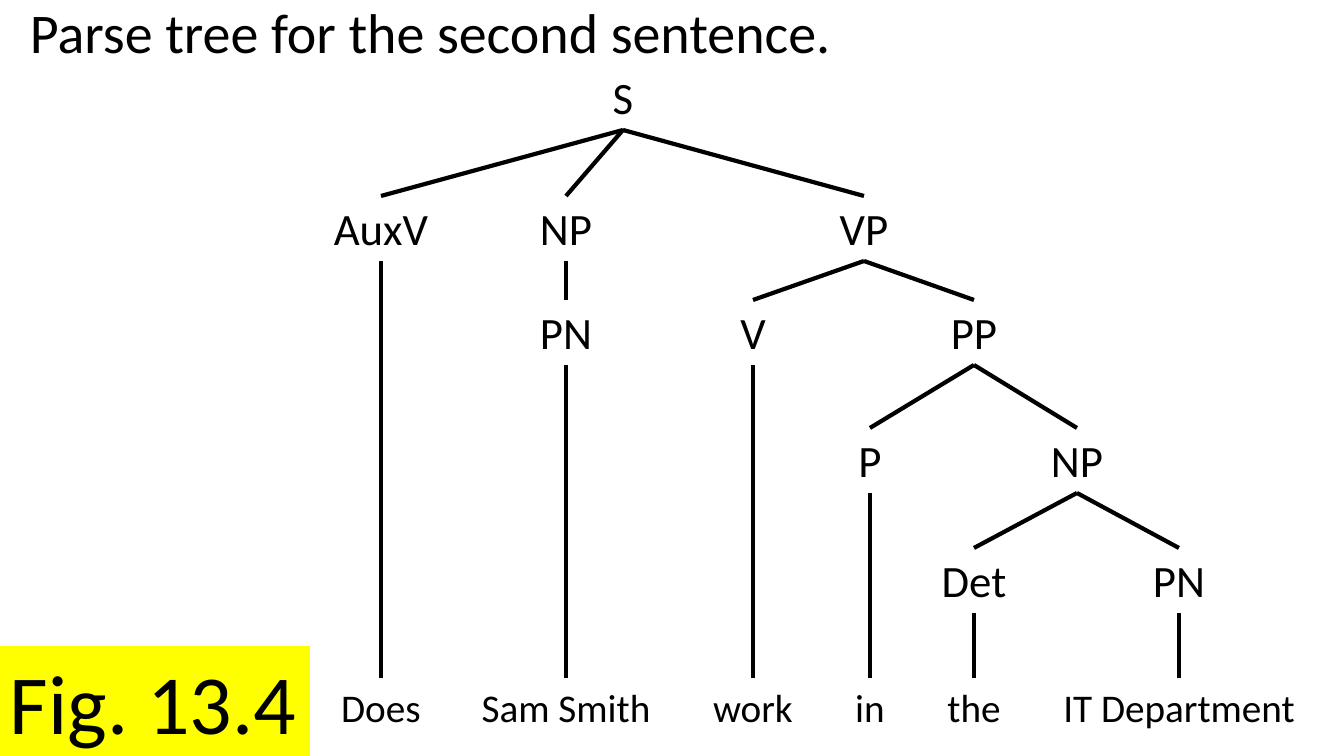
from pptx import Presentation
from pptx.dml.color import RGBColor
from pptx.enum.shapes import MSO_CONNECTOR, MSO_SHAPE
from pptx.enum.text import MSO_ANCHOR, MSO_AUTO_SIZE, PP_ALIGN
from pptx.oxml.ns import qn
from pptx.util import Pt
from lxml.etree import SubElement

BLACK = RGBColor(0, 0, 0)
YELLOW = RGBColor(255, 255, 0)
FONT = "Calibri"
NODE_H, WORD_H = 65, 57
LEVEL_TOPS = [0, 131, 235, 363, 483]
LABEL_WIDTHS = {"S": 42, "AuxV": 118, "NP": 74, "VP": 72, "PN": 74,
                "V": 48, "PP": 70, "P": 46, "Det": 88}
WORD_WIDTHS = {"Does": 102, "Sam Smith": 194, "work": 102, "in": 52,
               "the": 76, "IT Department": 256}

SENTENCE = ("S", 299, [
    ("AuxV", 57, "Does"),
    ("NP", 242, [("PN", 242, "Sam Smith")]),
    ("VP", 540, [
        ("V", 429, "work"),
        ("PP", 650, [
            ("P", 546, "in"),
            ("NP", 753, [
                ("Det", 650, "the"),
                ("PN", 855, "IT Department"),
            ]),
        ]),
    ]),
])


def px(n):
    return round(n * 914400 / 100.8)


def write(s, text, size, align, wrap=False):
    tf = s.text_frame
    tf.word_wrap = wrap
    if not wrap:
        tf.auto_size = MSO_AUTO_SIZE.SHAPE_TO_FIT_TEXT
    tf.vertical_anchor = MSO_ANCHOR.TOP
    p = tf.paragraphs[0]
    p.text = text
    p.alignment = align
    p.font.name = FONT
    p.font.size = Pt(size)
    p.font.color.rgb = BLACK
    return p


def add_title(slide, x, y, w, h):
    s = slide.shapes.add_textbox(px(x), px(y), px(w), px(h))
    p = write(s, "Parse tree for the second sentence.", 40, PP_ALIGN.LEFT, wrap=True)
    p.line_spacing = 0.9


def add_figure_label(slide, x, y, w, h):
    s = slide.shapes.add_shape(MSO_SHAPE.RECTANGLE, px(x), px(y), px(w), px(h))
    s.shadow.inherit = False
    s.fill.solid()
    s.fill.fore_color.rgb = YELLOW
    s.line.fill.background()
    write(s, "Fig. 13.4", 60, PP_ALIGN.LEFT)


def add_label(slide, text, size, center, top, w, h):
    s = slide.shapes.add_textbox(px(center - w // 2), px(top), px(w), px(h))
    write(s, text, size, PP_ALIGN.CENTER)
    return s


def add_branch(slide, parent, child):
    c = slide.shapes.add_connector(MSO_CONNECTOR.STRAIGHT, 0, 0, 0, 0)
    c.begin_connect(parent, 2)
    c.end_connect(child, 0)
    c.line.color.rgb = BLACK
    c.line.width = Pt(3)
    SubElement(c._element.spPr, qn("a:effectLst"))


def add_tree(slide, node, x, y, h, depth=0):
    label, center, below = node
    parent = add_label(slide, label, 32, x + center, y + LEVEL_TOPS[depth],
                       LABEL_WIDTHS[label], NODE_H)
    if isinstance(below, str):
        children = [add_label(slide, below, 28, x + center, y + h - WORD_H,
                              WORD_WIDTHS[below], WORD_H)]
    else:
        children = [add_tree(slide, child, x, y, h, depth + 1) for child in below]
    for child in children:
        add_branch(slide, parent, child)
    return parent


def main():
    prs = Presentation()
    prs.slide_width, prs.slide_height = px(1344), px(756)
    slide = prs.slides.add_slide(prs.slide_layouts[6])
    add_figure_label(slide, 0, 646, 310, 112)
    add_title(slide, 20, 0, 1306, 192)
    add_tree(slide, SENTENCE, 324, 65, 670)
    prs.save("out.pptx")


if __name__ == "__main__":
    main()
